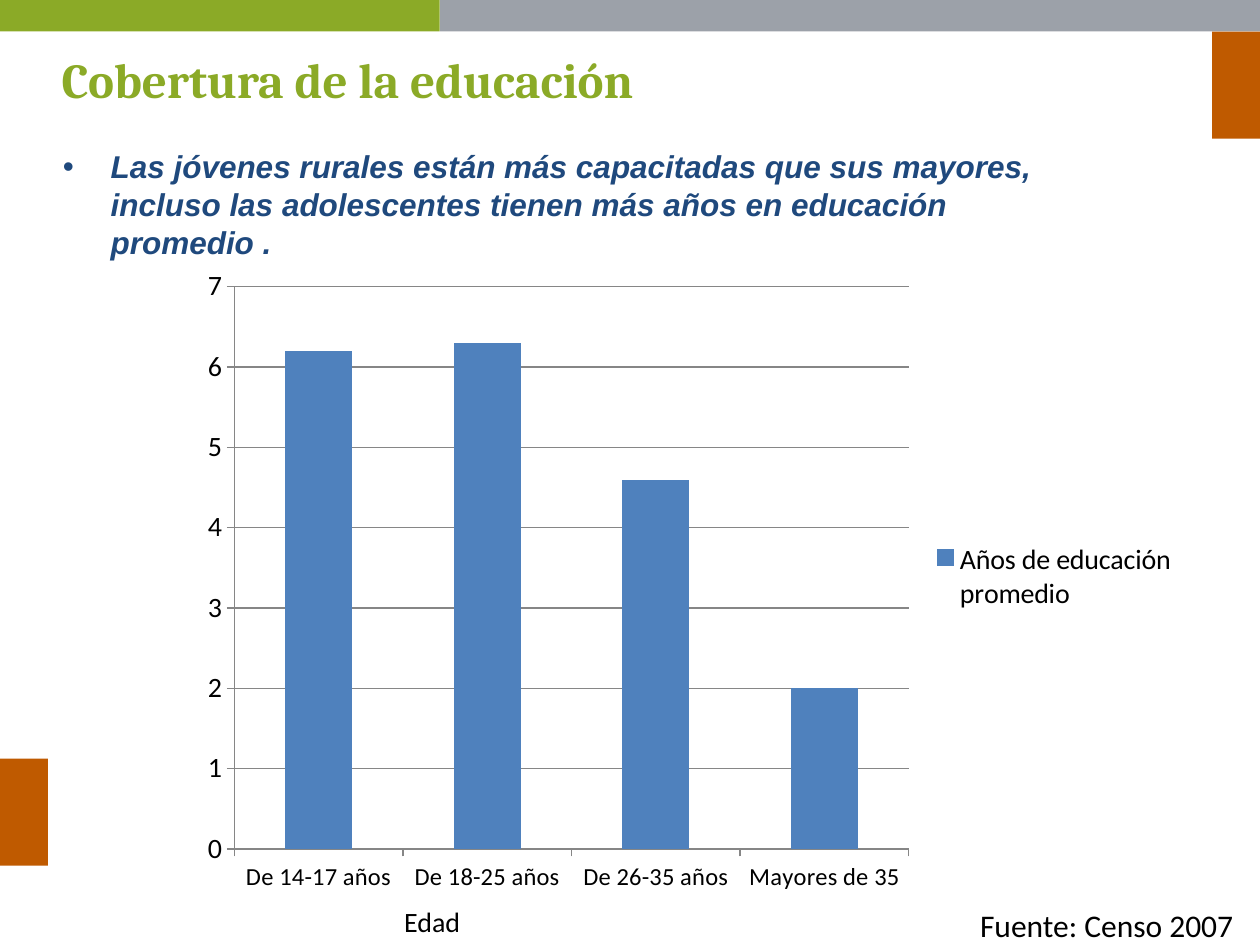
from lxml.etree import SubElement
from pptx import Presentation
from pptx.chart.data import CategoryChartData
from pptx.dml.color import RGBColor
from pptx.enum.chart import XL_CHART_TYPE as ChartType
from pptx.enum.chart import XL_LEGEND_POSITION as LegendPosition
from pptx.enum.chart import XL_TICK_MARK as TickMark
from pptx.enum.shapes import MSO_SHAPE as Shape
from pptx.oxml import parse_xml
from pptx.oxml.ns import nsdecls, qn
from pptx.util import Inches, Pt

WIDTH, HEIGHT = 10, 7.5
BAND_HEIGHT, BAND_SPLIT = 0.25, 3.49
TAB_WIDTH, TAB_HEIGHT = 0.38, 0.85
INDENT = 0.38

GREEN = RGBColor(0x8B, 0xAA, 0x27)
GREY = RGBColor(0x9C, 0xA1, 0xA9)
ORANGE = RGBColor(0xBF, 0x5A, 0x00)
NAVY = RGBColor(0x1F, 0x49, 0x7D)
BLUE = RGBColor(0x4F, 0x81, 0xBD)
AXIS_GREY = RGBColor(0x86, 0x86, 0x86)
BLACK = RGBColor(0, 0, 0)


def inches(*lengths):
    return [Inches(length) for length in lengths]


def style_font(font, size, color=BLACK, name="Calibri"):
    font.size, font.name = Pt(size), name
    font.color.rgb = color


def add_block(slide, box, color):
    block = slide.shapes.add_shape(Shape.RECTANGLE, *inches(*box))
    block.shadow.inherit = False
    block.fill.solid()
    block.fill.fore_color.rgb = color
    block.line.fill.background()


def add_text(slide, box, text, size, color=BLACK, name="Calibri"):
    frame = slide.shapes.add_textbox(*inches(*box)).text_frame
    frame.word_wrap = True
    paragraph = frame.paragraphs[0]
    paragraph.text = text
    style_font(paragraph.runs[0].font, size, color, name)
    return paragraph


def add_hanging_text(slide, box, text, size, color, name, bullet=None):
    """Add bold text with a hanging indent and an optional bullet."""
    paragraph = add_text(slide, box, text, size, color, name)
    paragraph.space_before, paragraph.space_after = Pt(size * 0.2), Pt(size * 0.4)
    paragraph.runs[0].font.bold = True
    properties = paragraph._p.get_or_add_pPr()
    properties.set("marL", str(Inches(INDENT)))
    properties.set("indent", str(-Inches(INDENT)))
    if bullet:
        SubElement(properties, qn("a:buFont"), typeface="Arial")
        SubElement(properties, qn("a:buChar"), char=bullet)
    return paragraph


def place_plot(chart, x, y, w, h):
    """Fix the inner plot area as shares of the chart's size."""
    plot_area = chart._chartSpace.chart.plotArea
    for layout in plot_area.findall(qn("c:layout")):
        plot_area.remove(layout)
    shares = "".join(f'<c:{key} val="{share}"/>'
                     for key, share in zip("xywh", (x, y, w, h)))
    plot_area.insert(0, parse_xml(
        f'<c:layout {nsdecls("c")}><c:manualLayout><c:layoutTarget val="inner"/>'
        f'<c:xMode val="edge"/><c:yMode val="edge"/>{shares}'
        '</c:manualLayout></c:layout>'))


def style_axis(axis, size):
    axis.major_tick_mark, axis.minor_tick_mark = TickMark.OUTSIDE, TickMark.NONE
    axis.format.line.color.rgb = AXIS_GREY
    style_font(axis.tick_labels.font, size)


def add_education_chart(slide, box):
    data = CategoryChartData()
    data.categories = ["De 14-17 años", "De 18-25 años", "De 26-35 años",
                       "Mayores de 35"]
    data.add_series("Años de educación promedio", (6.2, 6.3, 4.6, 2))
    chart = slide.shapes.add_chart(ChartType.COLUMN_CLUSTERED, *inches(*box), data).chart
    chart.has_title = False
    style_font(chart.font, 15)

    style_axis(chart.category_axis, 14)
    value_axis = chart.value_axis
    style_axis(value_axis, 16)
    value_axis.minimum_scale, value_axis.maximum_scale = 0, 7
    value_axis.major_unit = 1
    value_axis.has_major_gridlines = True
    value_axis.major_gridlines.format.line.color.rgb = AXIS_GREY

    chart.has_legend = True
    chart.legend.position = LegendPosition.RIGHT
    chart.legend.include_in_layout = False
    style_font(chart.legend.font, 16)

    plot = chart.plots[0]
    plot.gap_width, plot.vary_by_categories = 150, False
    fill = plot.series[0].format.fill
    fill.solid()
    fill.fore_color.rgb = BLUE
    place_plot(chart, 0.05, 0.05, 0.67, 0.87)


def main():
    presentation = Presentation()
    presentation.slide_width, presentation.slide_height = inches(WIDTH, HEIGHT)
    slide = presentation.slides.add_slide(presentation.slide_layouts[6])

    title = add_hanging_text(slide, (0.39, 0.4, 9.31, 0.67),
                             "Cobertura de la educación", 28, GREEN, "Cambria")
    title.line_spacing = 0.9
    message = add_hanging_text(
        slide, (0.4, 1.12, 8.07, 1.69),
        "Las jóvenes rurales están más capacitadas que sus mayores, incluso las "
        "adolescentes tienen más años en educación promedio .",
        18, NAVY, "Arial", bullet="•")
    message.runs[0].font.italic = True

    add_block(slide, (BAND_SPLIT, 0, WIDTH - BAND_SPLIT, BAND_HEIGHT), GREY)
    add_block(slide, (0, 0, BAND_SPLIT, BAND_HEIGHT), GREEN)
    for left, top in ((WIDTH - TAB_WIDTH, BAND_HEIGHT), (0, 6.02)):
        add_block(slide, (left, top, TAB_WIDTH, TAB_HEIGHT), ORANGE)

    add_education_chart(slide, (1.46, 2.02, 7.99, 5.13))
    add_text(slide, (7.68, 7.14, 2.32, 0.4), "Fuente: Censo 2007", 18)
    add_text(slide, (3.11, 7.13, 1.73, 0.37), "Edad", 16)
    presentation.save("out.pptx")


if __name__ == "__main__":
    main()
